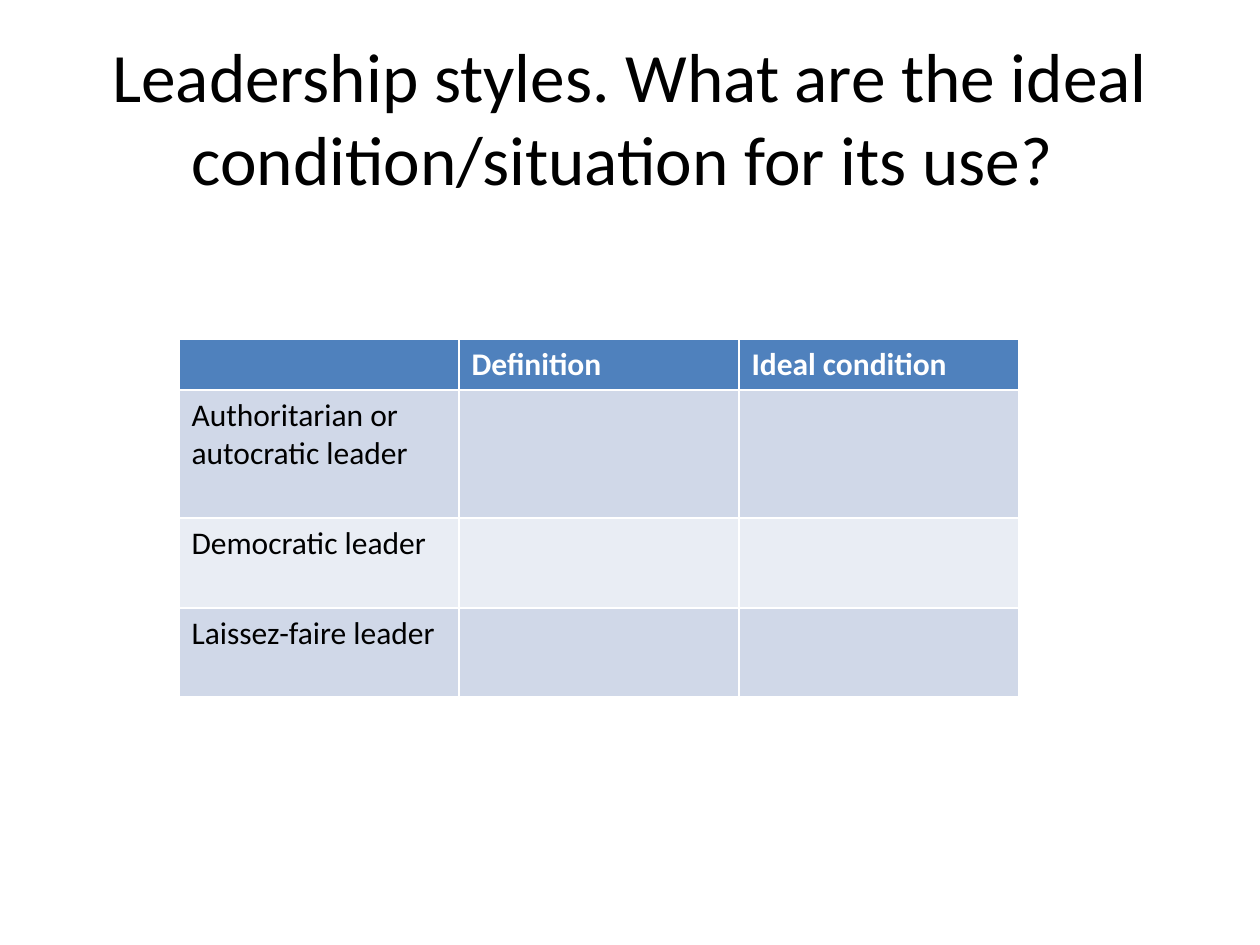
from pptx import Presentation
from pptx.dml.color import RGBColor
from pptx.enum.text import MSO_ANCHOR, MSO_AUTO_SIZE, PP_ALIGN
from pptx.util import Pt

PX = 914400 // 126  # EMU per px
BLACK = RGBColor(0x00, 0x00, 0x00)
WHITE = RGBColor(0xFF, 0xFF, 0xFF)
HEADER = RGBColor(0x4F, 0x81, 0xBD)
BANDS = [RGBColor(0xE9, 0xED, 0xF4), RGBColor(0xD0, 0xD8, 0xE8)]


def write(tf, text, size=18, color=BLACK, bold=False, align=PP_ALIGN.LEFT):
    p = tf.paragraphs[0]
    p.alignment = align
    r = p.add_run()
    r.text = text
    r.font.name = "Calibri"
    r.font.size = Pt(size)
    r.font.bold = bold
    r.font.color.rgb = color


prs = Presentation()
prs.slide_width, prs.slide_height = 1260 * PX, 945 * PX
s = prs.slides.add_slide(prs.slide_layouts[5])

# Title
title = s.shapes.title
title.left, title.top, title.width, title.height = [v * PX for v in (63, 38, 1134, 157)]
tf = title.text_frame
tf.auto_size = MSO_AUTO_SIZE.NONE
tf.word_wrap = True
tf.vertical_anchor = MSO_ANCHOR.MIDDLE
write(tf, "Leadership styles. What are the ideal condition/situation for its use? ",
      size=39.6, align=PP_ALIGN.CENTER)

# Leadership table: the default style draws the white borders
rows = [
    ("", "Definition", "Ideal condition"),
    ("Authoritarian or autocratic leader", "", ""),
    ("Democratic leader", "", ""),
    ("Laissez-faire leader", "", ""),
]
heights = [51, 128, 90, 89]
table = s.shapes.add_table(len(rows), 3, 179 * PX, 339 * PX,
                           840 * PX, sum(heights) * PX).table
for i, (texts, height) in enumerate(zip(rows, heights)):
    table.rows[i].height = height * PX
    for cell, text in zip(table.rows[i].cells, texts):
        cell.fill.solid()
        cell.fill.fore_color.rgb = BANDS[i % 2] if i else HEADER
        if text:
            write(cell.text_frame, text, color=BLACK if i else WHITE, bold=i == 0)

prs.save("out.pptx")
